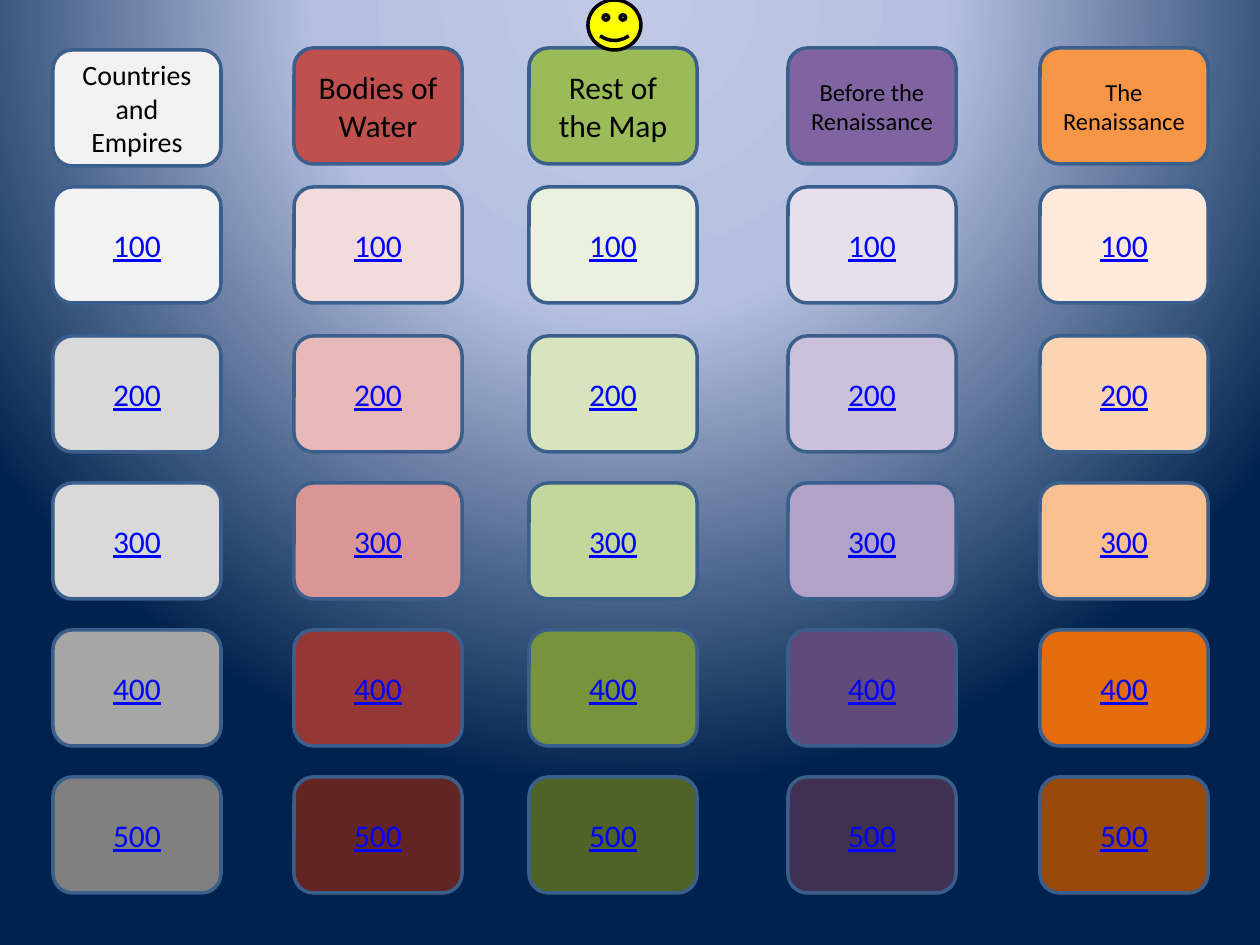
from dataclasses import dataclass

import pptx
import pptx.dml.color
import pptx.enum.shapes
import pptx.enum.text
import pptx.oxml
import pptx.oxml.ns
import pptx.util

PIXELS_PER_INCH = 126
SLIDE_WIDTH, SLIDE_HEIGHT = 1260, 945
TILE_WIDTH, TILE_HEIGHT = 168, 116
FIRST_ROW_TOP = 187
SECOND_ROW_TOP, ROW_STEP = 336, 147


@dataclass(frozen=True)
class Theme:
    font: str = "Calibri"
    text: str = "000000"
    link: str = "0000FF"
    outline: str = "3A5F8C"
    face: str = "FFFF00"
    face_outline: str = "000000"
    line_width: int = 2
    value_size: int = 18
    # Background stops: position in percent, colour
    glow: tuple[tuple[int, str], ...] = ((0, "BFC9E5"), (40, "B5C0E0"), (100, "00234D"))


@dataclass(frozen=True)
class Category:
    lines: tuple[str, ...]
    left: int
    top: int
    size: int
    header_fill: str
    value_fills: tuple[str, ...]


THEME = Theme()
CATEGORIES = (
    Category(("Countries and", "Empires"), 53, 50, 16, "F2F2F2",
             ("F2F2F2", "D9D9D9", "D9D9D9", "A6A6A6", "808080")),
    Category(("Bodies of Water",), 294, 48, 18, "C0504D",
             ("F2DCDB", "E6B9B8", "D99694", "953735", "632523")),
    Category(("Rest of the Map",), 529, 48, 18, "9BBB59",
             ("EBF1DE", "D7E4BD", "C3D69B", "77933C", "4F6228")),
    Category(("Before the Renaissance",), 788, 48, 14, "8064A2",
             ("E6E0EC", "CCC1DA", "B3A2C7", "604A7B", "403152")),
    Category(("The Renaissance",), 1040, 48, 14, "F79646",
             ("FDEADA", "FCD5B5", "FAC090", "E46C0A", "984807")),
)


def px(length: int) -> pptx.util.Emu:
    return pptx.util.Emu(round(length * 914400 / PIXELS_PER_INCH))


def rgb(colour: str) -> pptx.dml.color.RGBColor:
    return pptx.dml.color.RGBColor.from_string(colour)


def paint_background(slide) -> None:
    """Fill the slide with a circular glow centred above its top edge."""
    stops = "".join(
        f'<a:gs pos="{position * 1000}"><a:srgbClr val="{colour}"/></a:gs>'
        for position, colour in THEME.glow
    )
    background = pptx.oxml.parse_xml(
        f'<p:bg {pptx.oxml.ns.nsdecls("p", "a")}><p:bgPr>'
        f'<a:gradFill rotWithShape="1"><a:gsLst>{stops}</a:gsLst>'
        '<a:path path="circle">'
        '<a:fillToRect l="50000" t="-80000" r="50000" b="180000"/>'
        "</a:path></a:gradFill><a:effectLst/></p:bgPr></p:bg>"
    )
    slide.element.cSld.insert(0, background)


def add_outlined_shape(slide, kind, left: int, top: int, width: int, height: int,
                       fill: str, outline: str):
    shape = slide.shapes.add_shape(kind, px(left), px(top), px(width), px(height))
    shape.shadow.inherit = False
    shape.fill.solid()
    shape.fill.fore_color.rgb = rgb(fill)
    shape.line.color.rgb = rgb(outline)
    shape.line.width = pptx.util.Pt(THEME.line_width)
    return shape


def add_tile(slide, lines: tuple[str, ...], left: int, top: int, fill: str,
             size: int, colour: str, underline: bool = False) -> None:
    tile = add_outlined_shape(
        slide, pptx.enum.shapes.MSO_SHAPE.ROUNDED_RECTANGLE,
        left, top, TILE_WIDTH, TILE_HEIGHT, fill, THEME.outline)
    frame = tile.text_frame
    frame.word_wrap = True
    frame.vertical_anchor = pptx.enum.text.MSO_ANCHOR.MIDDLE
    frame.text = "\n".join(lines)
    for paragraph in frame.paragraphs:
        paragraph.alignment = pptx.enum.text.PP_ALIGN.CENTER
        font = paragraph.font
        font.name = THEME.font
        font.size = pptx.util.Pt(size)
        font.color.rgb = rgb(colour)
        font.underline = underline
        # Runs carry the underline too, so every viewer draws it
        for run in paragraph.runs:
            run.font.underline = underline


def add_category(slide, category: Category) -> None:
    add_tile(slide, category.lines, category.left, category.top,
             category.header_fill, category.size, THEME.text)
    for row, fill in enumerate(category.value_fills):
        top = SECOND_ROW_TOP + (row - 1) * ROW_STEP if row else FIRST_ROW_TOP
        add_tile(slide, (str((row + 1) * 100),), category.left, top, fill,
                 THEME.value_size, THEME.link, underline=True)


def main() -> None:
    presentation = pptx.Presentation()
    presentation.slide_width = px(SLIDE_WIDTH)
    presentation.slide_height = px(SLIDE_HEIGHT)
    slide = presentation.slides.add_slide(presentation.slide_layouts[6])
    paint_background(slide)

    # Game board: one header and five values per category
    for category in CATEGORIES:
        add_category(slide, category)

    # Smiley at the top edge
    add_outlined_shape(slide, pptx.enum.shapes.MSO_SHAPE.SMILEY_FACE,
                       588, 0, 53, 50, THEME.face, THEME.face_outline)

    presentation.save("out.pptx")


if __name__ == "__main__":
    main()
